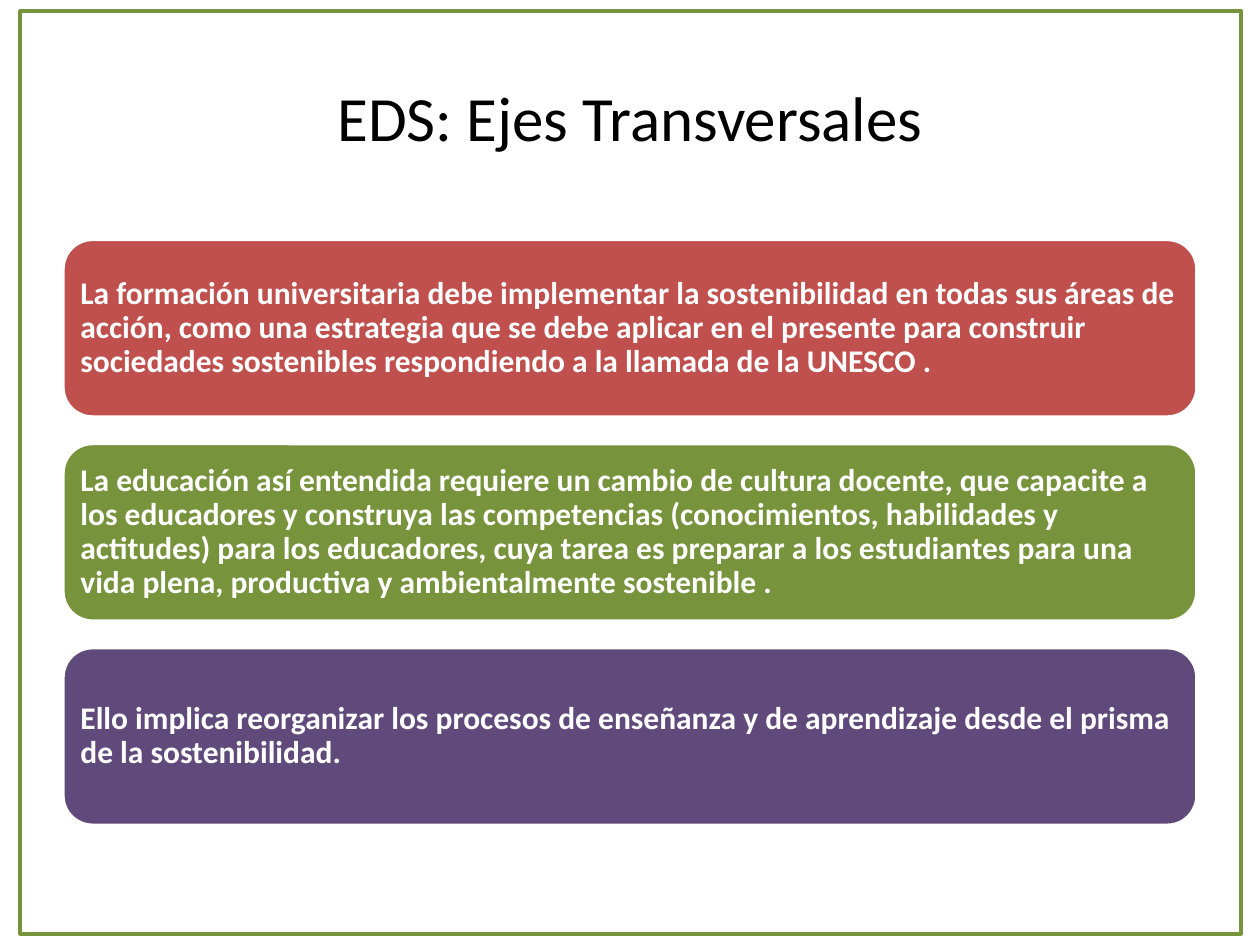
from pptx import Presentation
from pptx.dml.color import RGBColor
from pptx.enum.shapes import MSO_SHAPE
from pptx.enum.text import MSO_ANCHOR, PP_ALIGN
from pptx.util import Inches, Pt

RECT, ROUNDED = MSO_SHAPE.RECTANGLE, MSO_SHAPE.ROUNDED_RECTANGLE
MIDDLE = MSO_ANCHOR.MIDDLE
LEFT, CENTER = PP_ALIGN.LEFT, PP_ALIGN.CENTER

FONT = "Calibri"
WHITE, BLACK = "FFFFFF", "000000"
RED, GREEN, PURPLE = "C0504D", "77933C", "604A7B"

# Column of equal cards
MARGIN, CONTENT_W = 0.5, 9
CARD_TOP, CARD_H, CARD_STEP = 1.9, 1.41, 1.62
CARD_INSET = 0.07

TITLE = "EDS: Ejes Transversales"
CARDS = [
    (RED, "La formación universitaria debe implementar la sostenibilidad en "
          "todas sus áreas de acción, como una estrategia que se debe aplicar "
          "en el presente para construir sociedades sostenibles respondiendo "
          "a la llamada de la UNESCO ."),
    (GREEN, "La educación así entendida requiere un cambio de cultura docente, "
            "que capacite a los educadores y construya las competencias "
            "(conocimientos, habilidades y actitudes) para los educadores, "
            "cuya tarea es preparar a los estudiantes para una vida plena, "
            "productiva y ambientalmente sostenible ."),
    (PURPLE, "Ello implica reorganizar los procesos de enseñanza y de "
             "aprendizaje desde el prisma de la sostenibilidad."),
]


def rgb(value):
    return RGBColor.from_string(value)


def add_box(slide, kind, box, fill, line, width):
    sp = slide.shapes.add_shape(kind, *map(Inches, box))
    sp.shadow.inherit = False
    if fill:
        sp.fill.solid()
        sp.fill.fore_color.rgb = rgb(fill)
    else:
        sp.fill.background()
    sp.line.color.rgb = rgb(line)
    sp.line.width = Pt(width)
    return sp


def write(sp, text, size, color, align, bold=False):
    tf = sp.text_frame
    tf.word_wrap = True
    tf.vertical_anchor = MIDDLE
    p = tf.paragraphs[0]
    p.alignment = align
    r = p.add_run()
    r.text = text
    r.font.name = FONT
    r.font.size = Pt(size)
    r.font.bold = bold
    r.font.color.rgb = rgb(color)
    return tf


def add_title(slide, text):
    sp = slide.shapes.add_textbox(*map(Inches, (MARGIN, 0.3, CONTENT_W, 1.25)))
    write(sp, text, 36, BLACK, CENTER)


def add_card(slide, row, fill, text):
    box = (MARGIN, CARD_TOP + row * CARD_STEP, CONTENT_W, CARD_H)
    sp = add_box(slide, ROUNDED, box, fill, WHITE, 2)
    tf = write(sp, text, 18, WHITE, LEFT, bold=True)
    tf.margin_left = tf.margin_right = Inches(CARD_INSET)
    tf.margin_top = tf.margin_bottom = Inches(CARD_INSET)
    tf.paragraphs[0].line_spacing = 0.9


def main():
    prs = Presentation()
    prs.slide_width, prs.slide_height = Inches(10), Inches(7.5)
    slide = prs.slides.add_slide(prs.slide_layouts[6])

    add_title(slide, TITLE)
    for row, (fill, text) in enumerate(CARDS):
        add_card(slide, row, fill, text)

    # Frame around the slide
    add_box(slide, RECT, (0.16, 0.09, 9.69, 7.32), None, GREEN, 2.25)

    prs.save("out.pptx")


if __name__ == "__main__":
    main()
